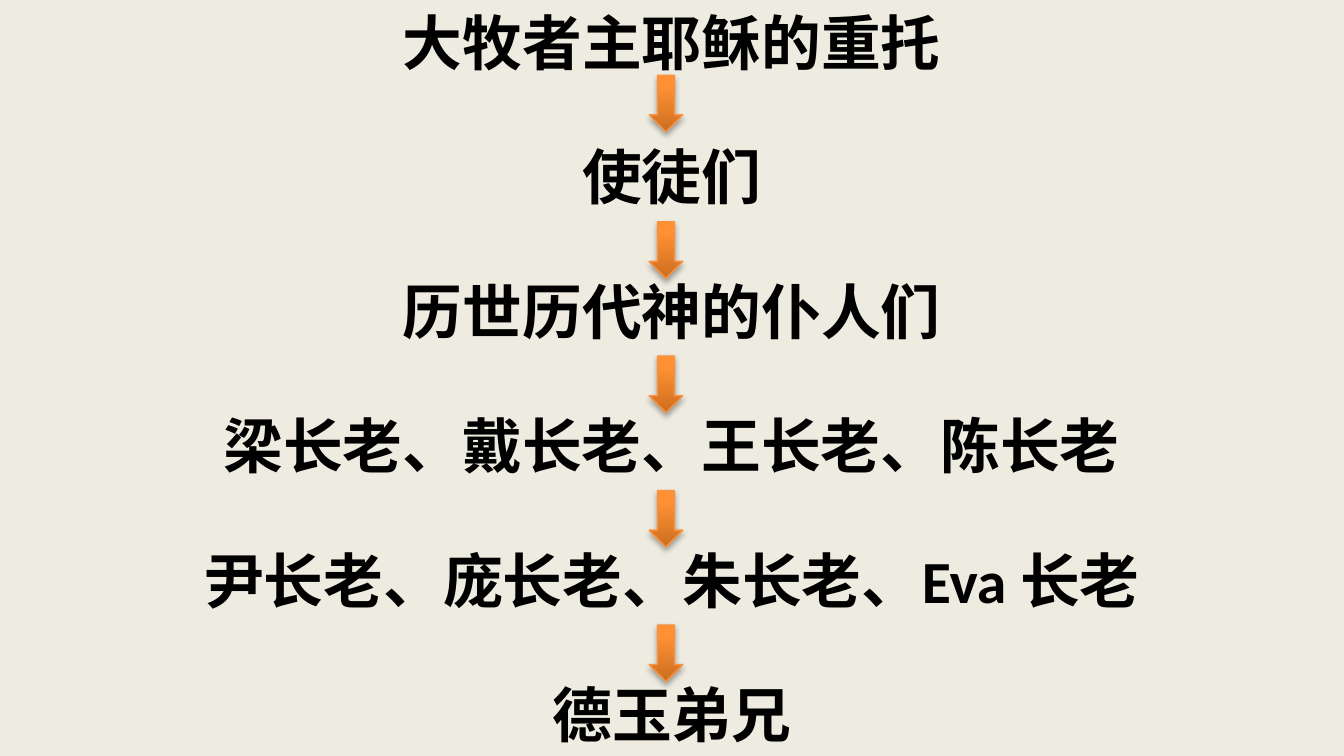
import pptx
import pptx.dml.color
import pptx.enum.shapes
import pptx.enum.text
import pptx.oxml
import pptx.oxml.ns
import pptx.util
from pptx.util import Inches

RGBColor = pptx.dml.color.RGBColor
CREAM = RGBColor(0xEE, 0xEC, 0xE1)
BLACK = RGBColor(0x00, 0x00, 0x00)
DARK_ORANGE = RGBColor(0xCC, 0x6E, 0x20)
BRIGHT_ORANGE = RGBColor(0xFF, 0x90, 0x34)
EDGE_ORANGE = RGBColor(0xF6, 0x92, 0x40)

PAGE_WIDTH = Inches(10)
PAGE_HEIGHT = PAGE_WIDTH * 9 // 16
GENERATIONS = [
    "大牧者主耶稣的重托",
    "使徒们",
    "历世历代神的仆人们",
    "梁长老、戴长老、王长老、陈长老",
    "尹长老、庞长老、朱长老、Eva 长老",
    "德玉弟兄",
]
ARROW_TOPS = [0.56] + [1.65 + step for step in range(4)]
SHADOW = (
    f'<a:effectLst {pptx.oxml.ns.nsdecls("a")}>'
    '<a:outerShdw blurRad="40000" dist="23000" dir="5400000" rotWithShape="0">'
    '<a:srgbClr val="000000"><a:alpha val="35000"/></a:srgbClr>'
    "</a:outerShdw></a:effectLst>"
)


def fill_title(title):
    """Spread the generations evenly down the title placeholder."""
    title.left, title.top, title.width, title.height = 0, 0, PAGE_WIDTH, PAGE_HEIGHT
    frame = title.text_frame
    frame.word_wrap = True
    frame.auto_size = pptx.enum.text.MSO_AUTO_SIZE.NONE
    frame.vertical_anchor = pptx.enum.text.MSO_ANCHOR.MIDDLE
    for index, generation in enumerate(GENERATIONS):
        para = frame.add_paragraph() if index else frame.paragraphs[0]
        para.alignment = pptx.enum.text.PP_ALIGN.CENTER
        para.line_spacing = pptx.util.Pt(38)
        para.space_before = pptx.util.Pt(34 if index else 0)
        span = para.add_run()
        span.text = generation
        span.font.name = "Calibri"
        span.font.size = pptx.util.Pt(32)
        span.font.bold = True
        span.font.color.rgb = BLACK


def add_down_arrow(page, top):
    """Add one shaded arrow leading to the next generation."""
    arrow = page.shapes.add_shape(
        pptx.enum.shapes.MSO_SHAPE.DOWN_ARROW,
        Inches(4.83), Inches(top), Inches(0.25), Inches(0.42),
    )
    arrow.fill.gradient()
    arrow.fill.gradient_angle = 90
    stops = arrow.fill.gradient_stops
    for stop, position, color in zip(stops, (0, 0.8), (DARK_ORANGE, BRIGHT_ORANGE)):
        stop.position = position
        stop.color.rgb = color
    arrow.line.color.rgb = EDGE_ORANGE
    arrow.line.width = pptx.util.Pt(0.75)
    arrow._element.spPr.append(pptx.oxml.parse_xml(SHADOW))


def main():
    """Build the slide and save it."""
    deck = pptx.Presentation()
    deck.slide_width, deck.slide_height = PAGE_WIDTH, PAGE_HEIGHT
    page = deck.slides.add_slide(deck.slide_layouts[5])
    page.background.fill.solid()
    page.background.fill.fore_color.rgb = CREAM
    fill_title(page.shapes.title)
    for top in ARROW_TOPS:
        add_down_arrow(page, top)
    deck.save("out.pptx")


if __name__ == "__main__":
    main()
